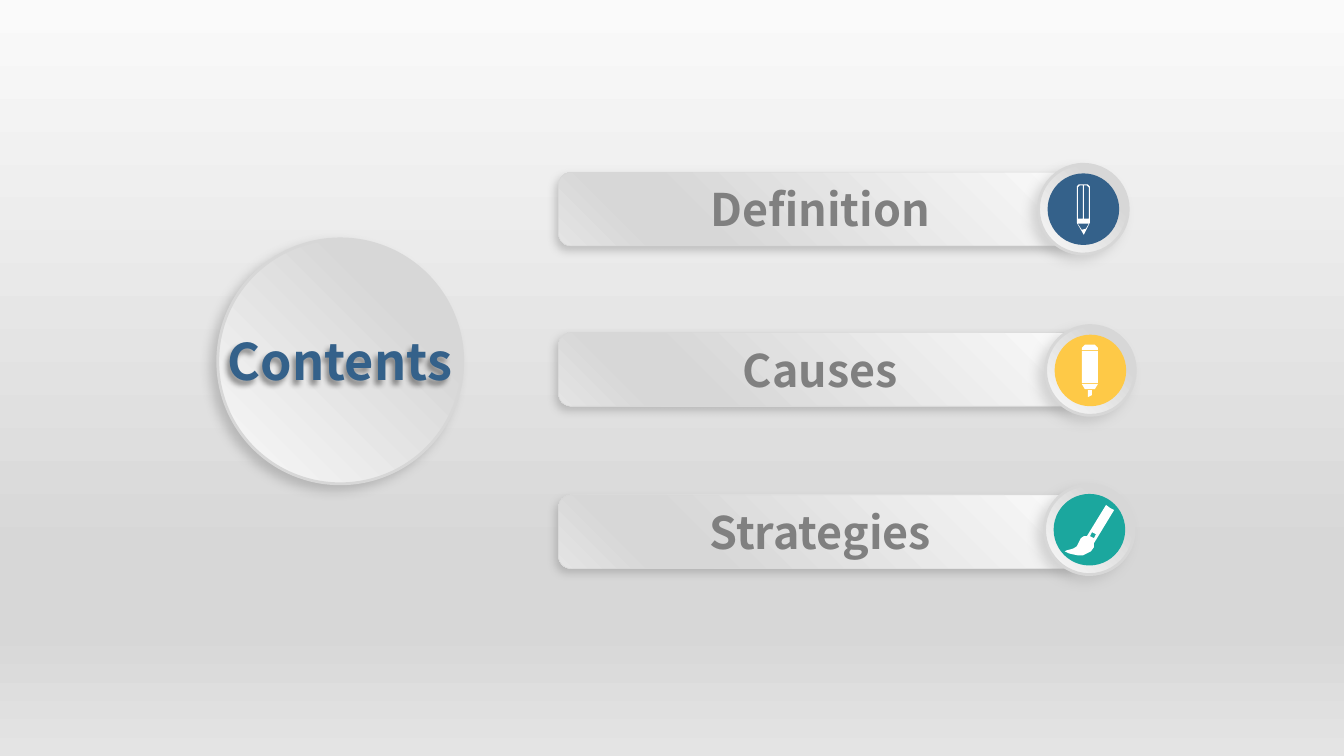
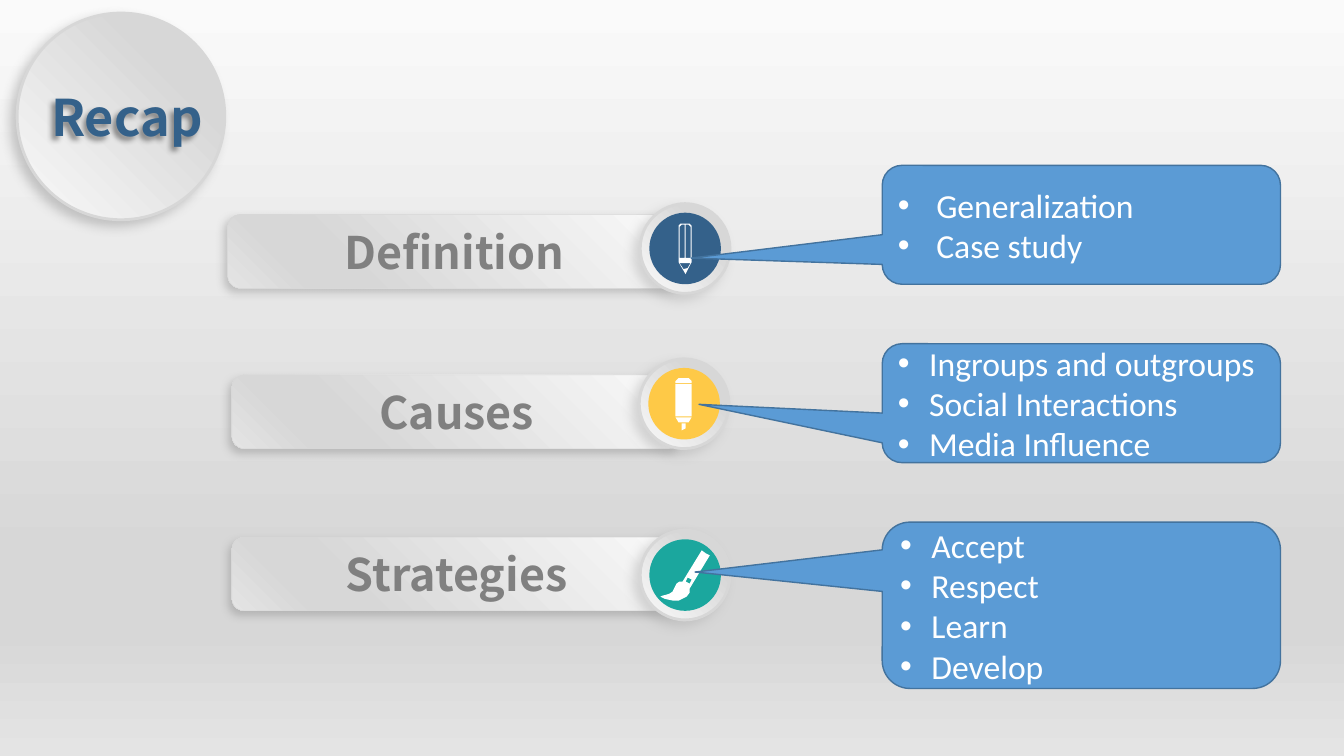
"""Build a contents slide and a recap slide with badges and callouts."""
from lxml import etree
from pptx import Presentation
from pptx.dml.color import RGBColor
from pptx.enum.shapes import MSO_SHAPE
from pptx.enum.text import MSO_ANCHOR, PP_ALIGN
from pptx.oxml.ns import qn
from pptx.util import Pt

PX = 9144
OVAL = MSO_SHAPE.OVAL
BAR = MSO_SHAPE.FLOWCHART_ALTERNATE_PROCESS
CALLOUT = MSO_SHAPE.ROUNDED_RECTANGULAR_CALLOUT
MIDDLE = MSO_ANCHOR.MIDDLE
LEFT, CENTER = PP_ALIGN.LEFT, PP_ALIGN.CENTER

HEADING_FONT = "Noto Sans CJK SC"
BODY_FONT = "Calibri"

WHITE = RGBColor(0xFF, 0xFF, 0xFF)
BLACK = RGBColor(0x00, 0x00, 0x00)
SILVER = RGBColor(0xD7, 0xD7, 0xD7)
GREY = RGBColor(0x80, 0x80, 0x80)
LIGHT_GREY = RGBColor(0xA6, 0xA6, 0xA6)
NAVY = RGBColor(0x34, 0x61, 0x8A)
YELLOW = RGBColor(0xFE, 0xC9, 0x47)
TEAL = RGBColor(0x1B, 0xA7, 0x9E)
BLUE = RGBColor(0x5B, 0x9B, 0xD5)
DARK_BLUE = RGBColor(0x43, 0x73, 0x9E)
GRADIENT = (
    (0, RGBColor(0xFA, 0xFA, 0xFA)),
    (74, SILVER),
    (83, SILVER),
    (100, RGBColor(0xE4, 0xE4, 0xE4)),
)

PENCIL = (
    ((40, 20), (49, 20), (51, 22), (51, 58), (45, 70), (38, 58), (38, 22)),
    ((45, 21), (45, 54), (50, 54), (50, 23), (48, 21)),
    ((41, 21), (39, 23), (39, 54), (44, 54), (44, 21)),
    ((39, 59), (43, 65), (47, 64), (50, 59)),
)
MARKER = (
    ((42, 64), (46, 64), (46, 69), (42, 71)),
    ((36, 58), (52, 58), (49, 63), (39, 63)),
    ((36, 25), (52, 25), (52, 57), (36, 57)),
    ((39, 19), (49, 19), (52, 22), (52, 24), (36, 24), (36, 22)),
)
BRUSH = (
    ((69, 25), (65, 23), (61, 20), (42, 51), (39, 51), (36, 53), (34, 57),
     (32, 61), (29, 63), (26, 64), (22, 65), (20, 66), (24, 68), (28, 69),
     (33, 70), (38, 70), (42, 68), (46, 66), (49, 62), (49, 58)),
    ((45, 51), (47, 47), (51, 49), (49, 53)),
)
TOPICS = (
    ("Definition", NAVY, PENCIL),
    ("Causes", YELLOW, MARKER),
    ("Strategies", TEAL, BRUSH),
)

CONTENTS_BARS = ((554, 171, 519), (554, 330, 519), (554, 491, 519))
CONTENTS_BADGES = ((1030, 163), (1037, 323), (1036, 481))
RECAP_BARS = ((226, 213, 450), (230, 372, 446), (230, 533, 446))
RECAP_BADGES = ((635, 202), (634, 356), (635, 526))
RECAP_CALLOUTS = (
    (164, 118, (-0.98, 0.28), 38, ("Generalization", "Case study")),
    (341, 118, (-0.96, 0.01), 31,
     ("Ingroups and outgroups", "Social Interactions", "Media Influence")),
    (518, 165, (-0.97, -0.2), 31, ("Accept", "Respect", "Learn", "Develop")),
)


def set_gradient(owner, fill, angle):
    """Give a fill the shared grey gradient, with the angle clockwise."""
    fill.gradient()
    fill.gradient_angle = 360 - angle
    stops = owner.element.find(".//" + qn("a:gsLst"))
    for stop in list(stops):
        stops.remove(stop)
    for percent, color in GRADIENT:
        stop = etree.SubElement(stops, qn("a:gs"), pos=str(percent * 1000))
        etree.SubElement(stop, qn("a:srgbClr"), val=str(color))


def set_shadow(shape, color, distance, blur, angle):
    """Add an outer shadow of 40 percent opacity, lengths in points."""
    shape.shadow.inherit = False
    effects = shape.element.find(".//" + qn("a:effectLst"))
    outer = etree.SubElement(
        effects, qn("a:outerShdw"), blurRad=str(Pt(blur)),
        dist=str(Pt(distance)), dir=str(angle * 60000), algn="tr",
        rotWithShape="0")
    tint = etree.SubElement(outer, qn("a:srgbClr"), val=str(color))
    etree.SubElement(tint, qn("a:alpha"), val="40000")


def add_shape(shapes, kind, left, top, width, height, *, fill=None,
              angle=0, line=None, weight=1):
    """Add a preset shape, with the shared gradient when no fill is given."""
    shape = shapes.add_shape(kind, left * PX, top * PX, width * PX, height * PX)
    shape.shadow.inherit = False
    if fill is None:
        set_gradient(shape, shape.fill, angle)
    else:
        shape.fill.solid()
        shape.fill.fore_color.rgb = fill
    if line is None:
        shape.line.fill.background()
    else:
        shape.line.color.rgb = line
        shape.line.width = Pt(weight)
    return shape


def add_bullet(para, indent):
    """Give a paragraph a round bullet with a hanging indent."""
    properties = para._p.get_or_add_pPr()
    properties.set("marL", str(indent * PX))
    properties.set("indent", str(-indent * PX))
    etree.SubElement(properties, qn("a:buFont"), typeface="Arial")
    etree.SubElement(properties, qn("a:buChar"), char="•")


def write_text(frame, *lines, size, color, font=HEADING_FONT, bold=False,
               align=LEFT, indent=0):
    """Write one paragraph per line into a text frame."""
    frame.word_wrap = True
    for index, line in enumerate(lines):
        para = frame.add_paragraph() if index else frame.paragraphs[0]
        para.alignment = align
        if indent:
            add_bullet(para, indent)
        span = para.add_run()
        span.text = line
        span.font.name = font
        span.font.size = Pt(size)
        span.font.bold = bold
        span.font.color.rgb = color


def add_ring(shapes, left, top, width, height, shadow):
    """Add a raised grey circle."""
    ring = add_shape(shapes, OVAL, left, top, width, height, angle=315,
                     line=SILVER, weight=2)
    set_shadow(ring, shadow, 6, 8, 140)


def add_bar(slide, left, top, width, label):
    """Add a raised topic bar with its label."""
    bar = add_shape(slide.shapes, BAR, left, top, width, 73, angle=135,
                    line=SILVER, weight=0.25)
    set_shadow(bar, GREY, 4, 6, 135)
    bar.text_frame.vertical_anchor = MIDDLE
    write_text(bar.text_frame, label, size=32, color=GREY, bold=True,
               align=CENTER)


def add_icon(shapes, left, top, contours):
    """Draw a white icon from closed contours."""
    builder = shapes.build_freeform(*contours[0][0], scale=PX)
    for index, contour in enumerate(contours):
        if index:
            builder.move_to(*contour[0])
        builder.add_line_segments(contour[1:], close=True)
    icon = builder.convert_to_shape(left * PX, top * PX)
    icon.shadow.inherit = False
    icon.fill.solid()
    icon.fill.fore_color.rgb = WHITE
    icon.line.fill.background()


def add_badge(slide, left, top, color, contours):
    """Add a grouped ring, coloured disc and icon."""
    shapes = slide.shapes.add_group_shape().shapes
    add_ring(shapes, left, top, 89, 89, LIGHT_GREY)
    add_shape(shapes, OVAL, left + 9, top + 9, 71, 71, fill=color)
    add_icon(shapes, left, top, contours)


def add_title(slide, left, top, width, text):
    """Add the shadowed title text."""
    box = slide.shapes.add_textbox(left * PX, top * PX, width * PX, 71 * PX)
    set_shadow(box, BLACK, 4, 4, 135)
    write_text(box.text_frame, text, size=36, color=NAVY, bold=True)


def add_callout(slide, top, height, tip, indent, lines):
    """Add a bulleted callout whose tip points at a badge."""
    callout = add_shape(slide.shapes, CALLOUT, 875, top, 395, height,
                        fill=BLUE, line=DARK_BLUE)
    callout.adjustments[0], callout.adjustments[1] = tip
    callout.text_frame.vertical_anchor = MIDDLE
    write_text(callout.text_frame, *lines, size=24, color=WHITE,
               font=BODY_FONT, indent=indent)


def add_topic_slide(deck, circle, bars, badges, title):
    """Add a slide with a title circle and the three topics."""
    slide = deck.slides.add_slide(deck.slide_layouts[6])
    add_ring(slide.shapes, *circle, GREY)
    for bar, (label, _, _) in zip(bars, TOPICS):
        add_bar(slide, *bar, label)
    for badge, (_, color, icon) in zip(badges, TOPICS):
        add_badge(slide, *badge, color, icon)
    add_title(slide, *title)
    return slide


def main():
    """Build and save the deck."""
    deck = Presentation()
    deck.slide_width, deck.slide_height = 1333 * PX, 750 * PX
    master = deck.slide_master
    set_gradient(master, master.background.fill, 90)
    add_topic_slide(deck, (216, 237, 243, 243), CONTENTS_BARS,
                    CONTENTS_BADGES, (216, 323, 261, "Contents"))
    recap = add_topic_slide(deck, (17, 13, 206, 205), RECAP_BARS,
                            RECAP_BADGES, (41, 80, 185, "Recap"))
    for callout in RECAP_CALLOUTS:
        add_callout(recap, *callout)
    deck.save("out.pptx")


if __name__ == "__main__":
    main()
